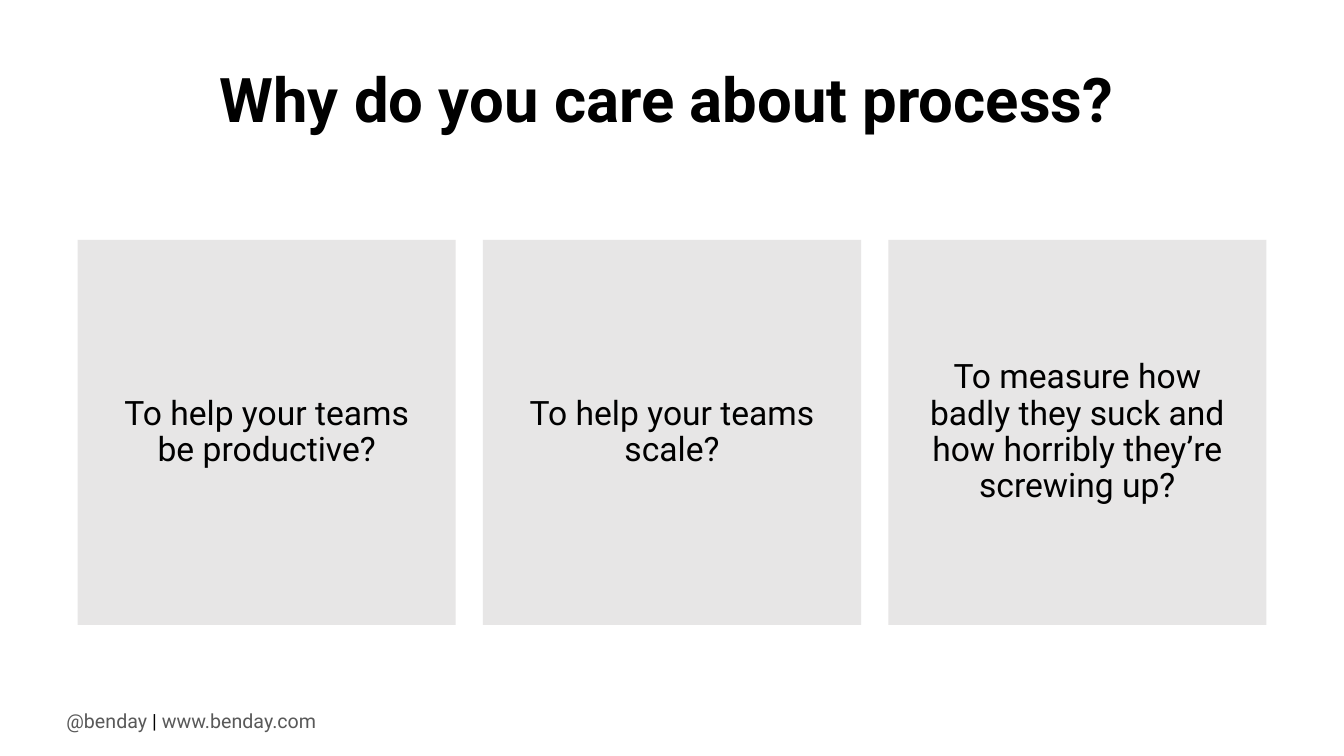
"""Build the slide that asks why process matters."""
import lxml.etree
import pptx
import pptx.dml.color
import pptx.enum.text
import pptx.oxml.ns
import pptx.util

Inches = pptx.util.Inches
ALIGN = pptx.enum.text.PP_ALIGN
ANCHOR = pptx.enum.text.MSO_ANCHOR
FIT = pptx.enum.text.MSO_AUTO_SIZE
COLORS = {"ink": "000000", "gray": "595959", "card": "E7E6E6"}
REASONS = [
    "To help your teams be productive?",
    "To help your teams scale?",
    "To measure how badly they suck and how horribly they’re screwing up?",
]


def color(name):
    return pptx.dml.color.RGBColor.from_string(COLORS[name])


def write(para, text, size=24, ink="ink", bold=False):
    run = para.add_run()
    run.text = text
    run.font.name = "Roboto"
    run.font.size = pptx.util.Pt(size)
    run.font.bold = bold
    run.font.color.rgb = color(ink)


def place(shape, left, top, width, height):
    shape.left, shape.top = Inches(left), Inches(top)
    shape.width, shape.height = Inches(width), Inches(height)


def setup(frame, anchor, insets):
    frame.word_wrap = True
    frame.auto_size = FIT.NONE
    frame.vertical_anchor = anchor
    sides = [Inches(inset) for inset in insets]
    frame.margin_left, frame.margin_top, frame.margin_right, frame.margin_bottom = sides
    para = frame.paragraphs[0]
    para.alignment = ALIGN.CENTER
    para.line_spacing = 0.9
    para.space_before = pptx.util.Pt(0)
    return para


def title(shape, text):
    place(shape, 0.77, 0.64, 11.79, 0.48)
    para = setup(shape.text_frame, ANCHOR.TOP, (0, 0.05, 0.1, 0.05))
    write(para, text, size=44, bold=True)


def card(shape, text, left):
    place(shape, left, 2.38, 3.75, 3.82)
    shape.fill.solid()
    shape.fill.fore_color.rgb = color("card")
    props = shape.text_frame.paragraphs[0]._p.get_or_add_pPr()
    props.set("marL", "0")
    props.set("indent", "0")
    lxml.etree.SubElement(props, pptx.oxml.ns.qn("a:buNone"))
    para = setup(shape.text_frame, ANCHOR.MIDDLE, (0.3,) * 4)
    write(para, text)


def footer(slide):
    box = slide.shapes.add_textbox(Inches(0.56), Inches(6.98), Inches(2.69), Inches(0.34))
    box.text_frame.word_wrap = False
    box.text_frame.auto_size = FIT.SHAPE_TO_FIT_TEXT
    para = box.text_frame.paragraphs[0]
    for text, ink in [("@benday", "gray"), (" | ", "ink"), ("www.benday.com", "gray")]:
        write(para, text, size=14, ink=ink)


def main():
    deck = pptx.Presentation()
    deck.slide_width, deck.slide_height = Inches(13.33), Inches(7.5)
    slide = deck.slides.add_slide(deck.slide_layouts.get_by_name("Comparison"))
    title(slide.shapes.title, "Why do you care about process?")
    *bodies, spare = list(slide.placeholders)[1:]
    spare.element.getparent().remove(spare.element)
    for col, (body, text) in enumerate(zip(bodies, REASONS)):
        card(body, text, 0.77 + 4.02 * col)
    footer(slide)
    deck.save("out.pptx")


if __name__ == "__main__":
    main()
